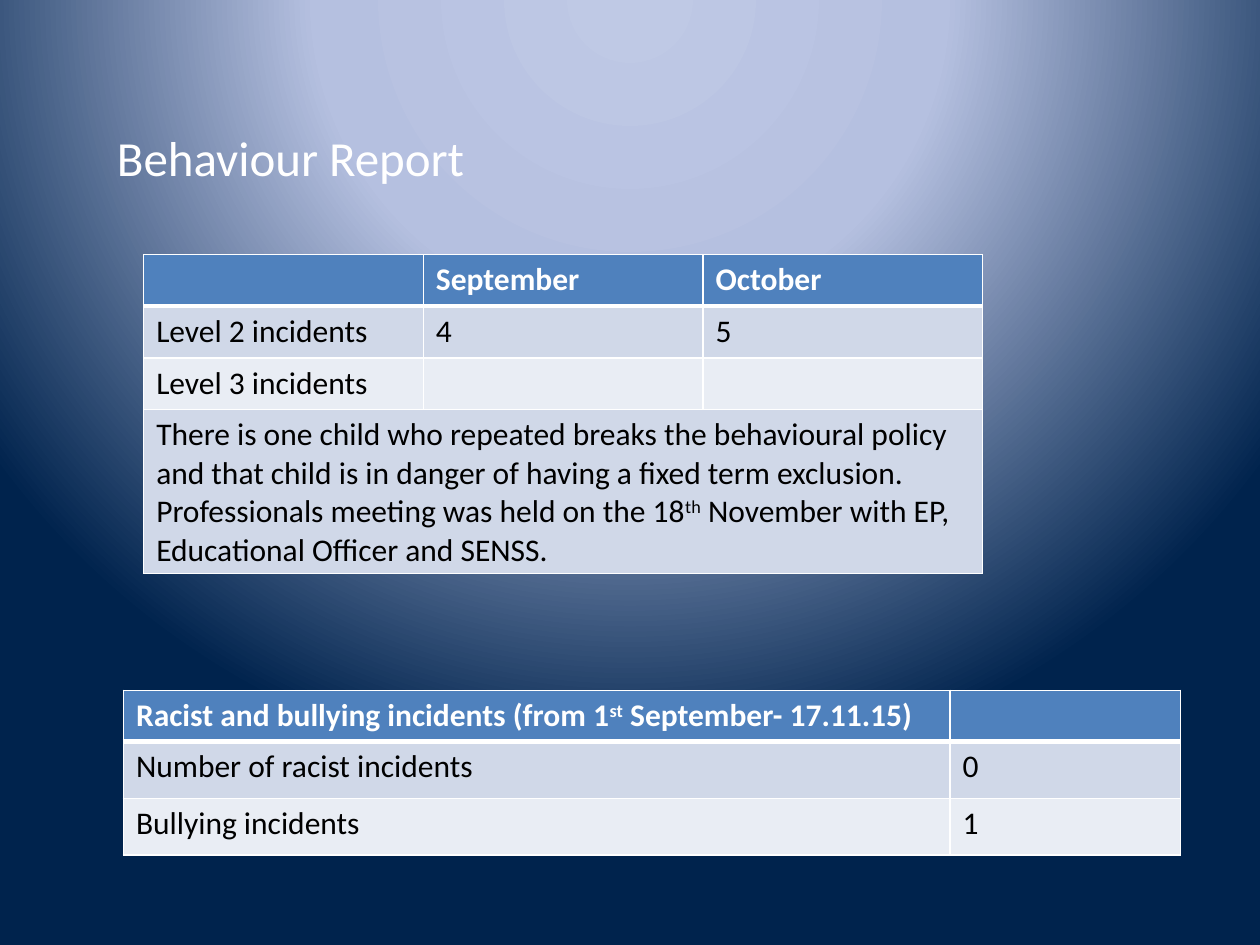
from lxml.etree import SubElement
from pptx import Presentation
from pptx.dml.color import RGBColor
from pptx.oxml import parse_xml
from pptx.oxml.ns import nsdecls, qn
from pptx.util import Inches, Pt

FONT = "Calibri"
COLORS = {
    "white": "FFFFFF", "black": "000000", "header": "4F81BD",
    "band_dark": "D0D8E8", "band_light": "E9EDF4",
    "glow": "BFC9E5", "halo": "B5C0E0", "navy": "00234D",
}


def rgb(name):
    return RGBColor.from_string(COLORS[name])


def set_background(s):
    """Circular gradient centred above the slide."""
    s.background.fill.solid()
    solid = s._element.xpath(".//p:bgPr/a:solidFill")[0]
    stops = "".join(
        f'<a:gs pos="{pos * 1000}"><a:srgbClr val="{COLORS[name]}"/></a:gs>'
        for pos, name in ((0, "glow"), (40, "halo"), (100, "navy")))
    solid.getparent().replace(solid, parse_xml(
        f'<a:gradFill {nsdecls("a")} rotWithShape="1"><a:gsLst>{stops}</a:gsLst>'
        '<a:path path="circle"><a:fillToRect l="50000" t="-80000" r="50000" b="180000"/>'
        '</a:path></a:gradFill>'))


def style_font(p, size, color, bold=False):
    p.font.name, p.font.size, p.font.bold = FONT, Pt(size), bold
    p.font.color.rgb = rgb(color)


def add_marked_runs(p, text):
    """Add runs to p; text between carets is superscript."""
    for i, part in enumerate(text.split("^")):
        r = p.add_run()
        r.text = part
        if i % 2:
            r._r.get_or_add_rPr().set("baseline", "30000")


def add_borders(cell, top, bottom):
    tcPr = cell._tc.get_or_add_tcPr()
    for side, width in (("L", 1), ("R", 1), ("T", top), ("B", bottom)):
        ln = SubElement(tcPr, qn(f"a:ln{side}"), w=str(Pt(width)))
        fill = SubElement(ln, qn("a:solidFill"))
        SubElement(fill, qn("a:srgbClr"), val=COLORS["white"])


def add_title(s, left, top, width, height, text):
    tf = s.shapes.add_textbox(Inches(left), Inches(top), Inches(width), Inches(height)).text_frame
    tf.word_wrap = True
    p = tf.paragraphs[0]
    p.text = text
    style_font(p, 28, "white")


def add_banded_table(s, left, top, col_widths, row_heights, rows):
    """Header row plus alternating bands; a one-item row spans all columns."""
    table = s.shapes.add_table(
        len(rows), len(col_widths), Inches(left), Inches(top),
        Inches(sum(col_widths)), Inches(sum(row_heights))).table
    for column, width in zip(table.columns, col_widths):
        column.width = Inches(width)
    for row, height in zip(table.rows, row_heights):
        row.height = Inches(height)

    for i, texts in enumerate(rows):
        if len(texts) == 1:
            table.cell(i, 0).merge(table.cell(i, len(col_widths) - 1))
        header = i == 0
        band = "header" if header else "band_dark" if i % 2 else "band_light"
        for j in range(len(col_widths)):
            cell = table.cell(i, j)
            add_borders(cell, 3 if i == 1 else 1, 3 if header else 1)
            cell.fill.solid()
            cell.fill.fore_color.rgb = rgb(band)
            if j >= len(texts):
                continue
            tf = cell.text_frame
            for n, line in enumerate(texts[j].split("\n")):
                p = tf.add_paragraph() if n else tf.paragraphs[0]
                style_font(p, 18, "white" if header else "black", header)
                if line:
                    add_marked_runs(p, line)


def main():
    prs = Presentation()
    prs.slide_width, prs.slide_height = Inches(10), Inches(7.5)
    s = prs.slides.add_slide(prs.slide_layouts[6])
    set_background(s)
    add_banded_table(s, 0.98, 5.48, [6.56, 1.83], [0.4, 0.45, 0.45], [
        ["Racist and bullying incidents (from 1^st^ September- 17.11.15)", ""],
        ["Number of racist incidents", "0"],
        ["Bullying incidents", "1"],
    ])
    add_title(s, 0.83, 0.96, 7.56, 0.57, "Behaviour Report")
    add_banded_table(s, 1.14, 2.02, [2.22] * 3, [0.41] * 3 + [1.3], [
        ["", "September", "October"],
        ["Level 2 incidents", "4", "5"],
        ["Level 3 incidents", "", ""],
        ["There is one child who repeated breaks the behavioural policy and that child "
         "is in danger of having a fixed term exclusion.\n"
         "Professionals meeting was held on the 18^th^ November with EP, "
         "Educational Officer and SENSS."],
    ])
    prs.save("out.pptx")


if __name__ == "__main__":
    main()
